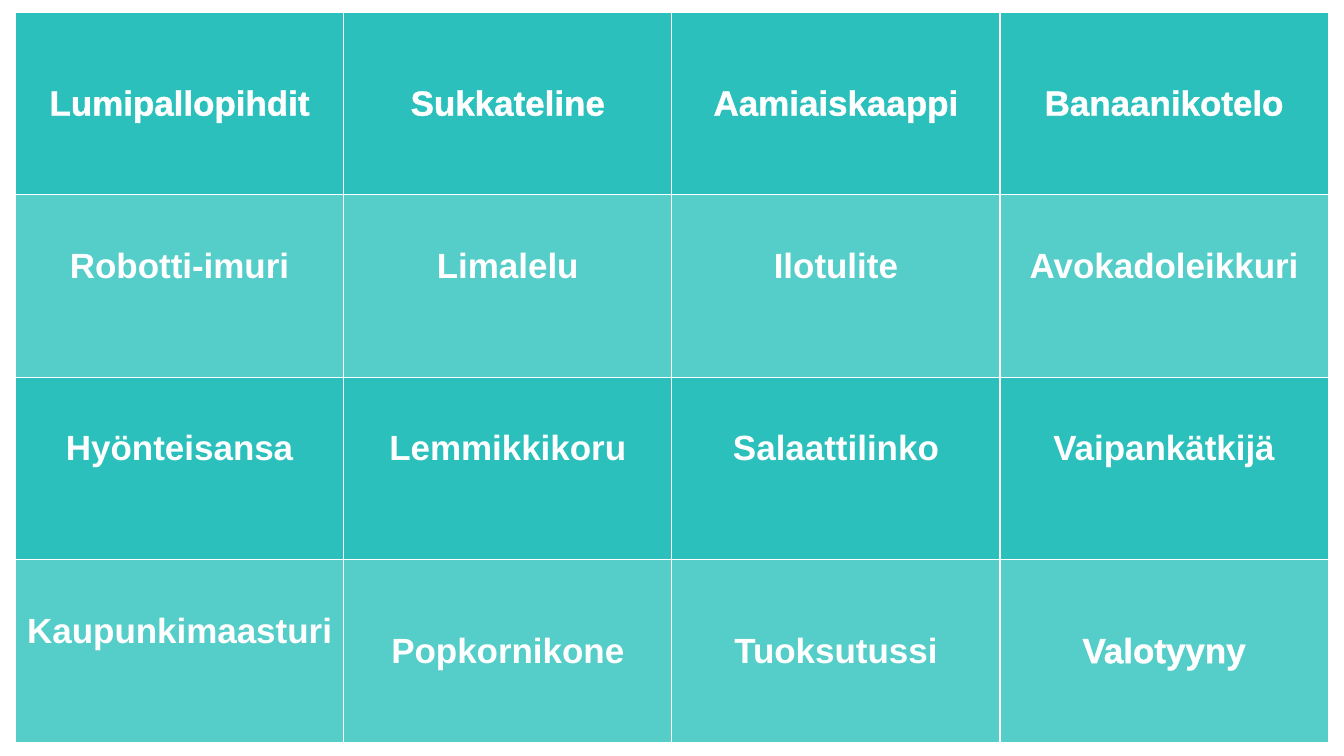
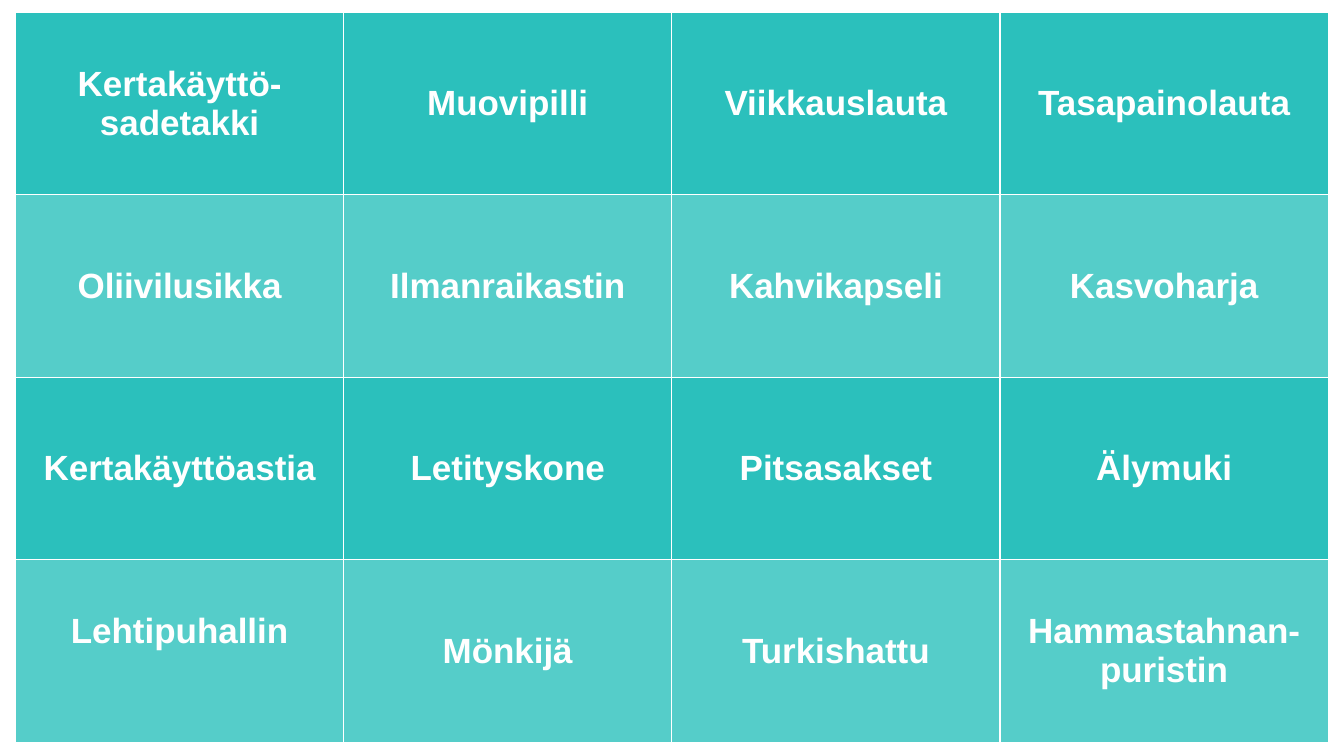
"""Build two slides, each a four-by-four teal grid of Finnish product names."""
from dataclasses import dataclass

from pptx import Presentation
from pptx.dml.color import RGBColor
from pptx.enum.text import MSO_ANCHOR, PP_ALIGN
from pptx.oxml import parse_xml
from pptx.oxml.ns import nsdecls
from pptx.util import Cm, Pt


@dataclass(frozen=True)
class Theme:
    font: str = "Arial"
    size: float = 25
    white: str = "FFFFFF"
    bands: tuple = ("2BC0BC", "55CDC9")
    border: float = 1
    outline: float = 0.75


theme = Theme()

grids = [
    [
        ["Lumipallopihdit", "Sukkateline", "Aamiaiskaappi", "Banaanikotelo"],
        ["Robotti-imuri", "Limalelu", "Ilotulite", "Avokadoleikkuri"],
        ["Hyönteisansa", "Lemmikkikoru", "Salaattilinko", "Vaipankätkijä"],
        ["Kaupunkimaasturi", "Popkornikone", "Tuoksutussi", "Valotyyny"],
    ],
    [
        ["Kertakäyttö-sadetakki", "Muovipilli", "Viikkauslauta", "Tasapainolauta"],
        ["Oliivilusikka", "Ilmanraikastin", "Kahvikapseli", "Kasvoharja"],
        ["Kertakäyttöastia", "Letityskone", "Pitsasakset", "Älymuki"],
        ["Lehtipuhallin", "Mönkijä", "Turkishattu", "Hammastahnan-puristin"],
    ],
]
outlined_products = {*grids[0][0], "Valotyyny"}
raised_products = {*grids[0][1], *grids[0][2], "Kaupunkimaasturi", "Lehtipuhallin"}

column_width, row_height = Cm(8.27), Cm(4.6)
raised_margin = Cm(1.12)


def white_line(tag, points):
    return parse_xml(
        f'<a:{tag} {nsdecls("a")} w="{Pt(points)}"><a:solidFill>'
        f'<a:srgbClr val="{theme.white}"/></a:solidFill></a:{tag}>'
    )


deck = Presentation()
deck.slide_width, deck.slide_height = Cm(33.87), Cm(19.05)

for products in grids:
    slide = deck.slides.add_slide(deck.slide_layouts[6])
    rows, columns = len(products), len(products[0])
    grid = slide.shapes.add_table(
        rows, columns, Cm(0.39), Cm(0.31), column_width * columns, row_height * rows
    ).table
    grid.first_row = grid.horz_banding = False
    for column in grid.columns:
        column.width = column_width
    for row_index, names in enumerate(products):
        grid.rows[row_index].height = row_height
        for column_index, product in enumerate(names):
            cell = grid.cell(row_index, column_index)
            cell.vertical_anchor = MSO_ANCHOR.MIDDLE
            if product in raised_products:
                cell.margin_bottom = raised_margin
            borders = cell._tc.get_or_add_tcPr()
            for side in ("lnL", "lnR", "lnT", "lnB"):
                borders.append(white_line(side, theme.border))
            cell.fill.solid()
            band = theme.bands[row_index % len(theme.bands)]
            cell.fill.fore_color.rgb = RGBColor.from_string(band)

            paragraph = cell.text_frame.paragraphs[0]
            paragraph.alignment = PP_ALIGN.CENTER
            label = paragraph.add_run()
            label.text = product
            label.font.name = theme.font
            label.font.size = Pt(theme.size)
            label.font.bold = True
            label.font.color.rgb = RGBColor.from_string(theme.white)
            if product in outlined_products:
                label._r.get_or_add_rPr().insert(0, white_line("ln", theme.outline))

deck.save("out.pptx")
